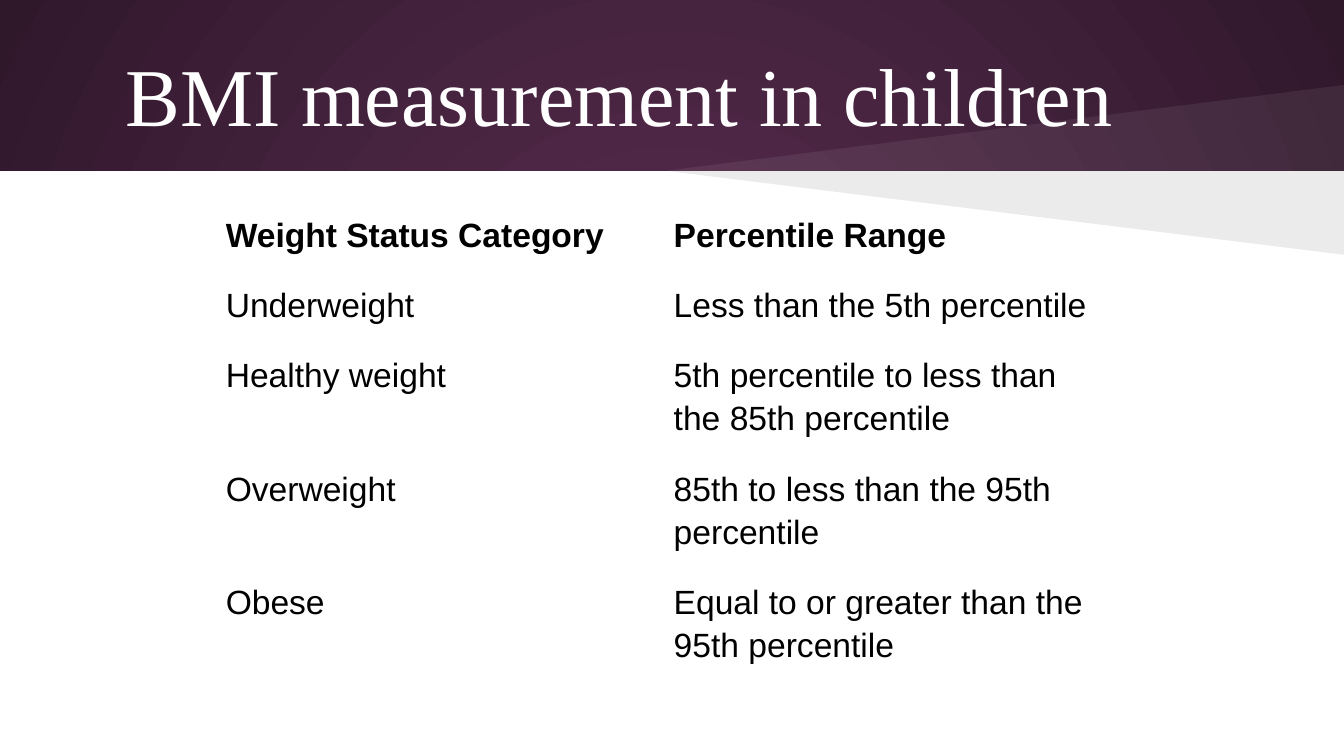
"""Build a slide with a table of BMI percentile ranges for children."""
import dataclasses

import lxml.etree
import pptx
import pptx.dml.color
import pptx.enum.text
import pptx.oxml
import pptx.oxml.ns
import pptx.util

Pt = pptx.util.Pt


@dataclasses.dataclass(frozen=True)
class Theme:
    glow: str = "592D50"
    edge: str = "30182B"
    light: str = "FFFFFF"
    dark: str = "000000"
    title_font: str = "Times New Roman"
    body_font: str = "Arial"
    title_size: int = 44
    body_size: int = 18


THEME = Theme()
WIDTH, HEIGHT = 720, 405
BAND_BOTTOM = 91.5
WEDGE_LEFT, WEDGE_RISE = 356.5, 46
LINE_HEIGHT = 21.6
NO_GRID_STYLE = "{2D5ABB26-0587-4C30-8999-92F81FD0307C}"
ROWS = [
    ("Weight Status Category", "Percentile Range", 1),
    ("Underweight", "Less than the 5th percentile", 1),
    ("Healthy weight", "5th percentile to less than the 85th percentile", 2),
    ("Overweight", "85th to less than the 95th percentile", 2),
    ("Obese", "Equal to or greater than the 95th percentile", 2),
]


def rgb(value):
    return pptx.dml.color.RGBColor.from_string(value)


def set_background(slide):
    fill = slide.background.fill
    fill.gradient()
    for stop, color, position in zip(fill.gradient_stops, (THEME.glow, THEME.edge), (0, 1)):
        stop.color.rgb = rgb(color)
        stop.position = position
    linear = slide.background._cSld.find(".//" + pptx.oxml.ns.qn("a:lin"))
    radial = pptx.oxml.parse_xml(
        f'<a:path {pptx.oxml.ns.nsdecls("a")} path="circle">'
        '<a:fillToRect l="50000" t="50000" r="50000" b="50000"/></a:path>'
    )
    linear.getparent().replace(linear, radial)


def add_polygon(slide, points, color, opacity=100):
    (left, top), *others = [(Pt(x), Pt(y)) for x, y in points]
    builder = slide.shapes.build_freeform(left, top)
    builder.add_line_segments(others, close=True)
    shape = builder.convert_to_shape()
    shape.shadow.inherit = False
    shape.line.fill.background()
    shape.fill.solid()
    shape.fill.fore_color.rgb = rgb(color)
    if opacity < 100:
        color_element = shape._element.spPr.find(".//" + pptx.oxml.ns.qn("a:srgbClr"))
        alpha = lxml.etree.SubElement(color_element, pptx.oxml.ns.qn("a:alpha"))
        alpha.set("val", str(opacity * 1000))


def add_panel(slide):
    panel = [(0, BAND_BOTTOM), (WIDTH, BAND_BOTTOM), (WIDTH, HEIGHT), (0, HEIGHT)]
    add_polygon(slide, panel, THEME.light)
    for rise, color, opacity in ((-WEDGE_RISE, THEME.light, 7), (WEDGE_RISE - 1, THEME.dark, 8)):
        wedge = [(WIDTH, BAND_BOTTOM), (WEDGE_LEFT, BAND_BOTTOM), (WIDTH, BAND_BOTTOM + rise)]
        add_polygon(slide, wedge, color, opacity)


def add_run(paragraph, text, font, size, color, bold=False):
    run = paragraph.add_run()
    run.text = text
    run.font.name = font
    run.font.size = Pt(size)
    run.font.bold = bold
    run.font.color.rgb = rgb(color)


def set_margins(target):
    for side in ("left", "right", "top", "bottom"):
        setattr(target, f"margin_{side}", Pt(7.2))


def add_title(slide, text):
    title = slide.shapes.title
    slide.shapes._spTree.append(title._element)
    title.left, title.top, title.width, title.height = Pt(36), Pt(16.5), Pt(648), Pt(67.5)
    frame = title.text_frame
    set_margins(frame)
    frame.word_wrap = True
    frame.auto_size = pptx.enum.text.MSO_AUTO_SIZE.NONE
    frame.vertical_anchor = pptx.enum.text.MSO_ANCHOR.MIDDLE
    paragraph = frame.paragraphs[0]
    paragraph.alignment = pptx.enum.text.PP_ALIGN.LEFT
    paragraph._p.get_or_add_pPr().set("indent", str(Pt(24)))
    add_run(paragraph, text, THEME.title_font, THEME.title_size, THEME.light)


def fill_cell(cell, text, bold):
    set_margins(cell)
    cell.fill.background()
    paragraph = cell.text_frame.paragraphs[0]
    paragraph.line_spacing = 1.15
    add_run(paragraph, text, THEME.body_font, THEME.body_size, THEME.dark, bold)


def add_range_table(slide):
    frame = slide.shapes.add_table(len(ROWS), 2, Pt(113.75), Pt(106), Pt(480), Pt(271))
    table = frame.table
    table.first_row = table.horz_banding = False
    frame._element.find(".//" + pptx.oxml.ns.qn("a:tableStyleId")).text = NO_GRID_STYLE
    for index, (category, percentile, lines) in enumerate(ROWS):
        table.rows[index].height = Pt(LINE_HEIGHT * lines)
        for column, text in enumerate((category, percentile)):
            fill_cell(table.cell(index, column), text, bold=index == 0)
    frame.height = Pt(271)


def main():
    presentation = pptx.Presentation()
    presentation.slide_width, presentation.slide_height = Pt(WIDTH), Pt(HEIGHT)
    slide = presentation.slides.add_slide(presentation.slide_layouts[5])
    set_background(slide)
    add_panel(slide)
    add_title(slide, "BMI measurement in children")
    add_range_table(slide)
    presentation.save("out.pptx")


if __name__ == "__main__":
    main()
